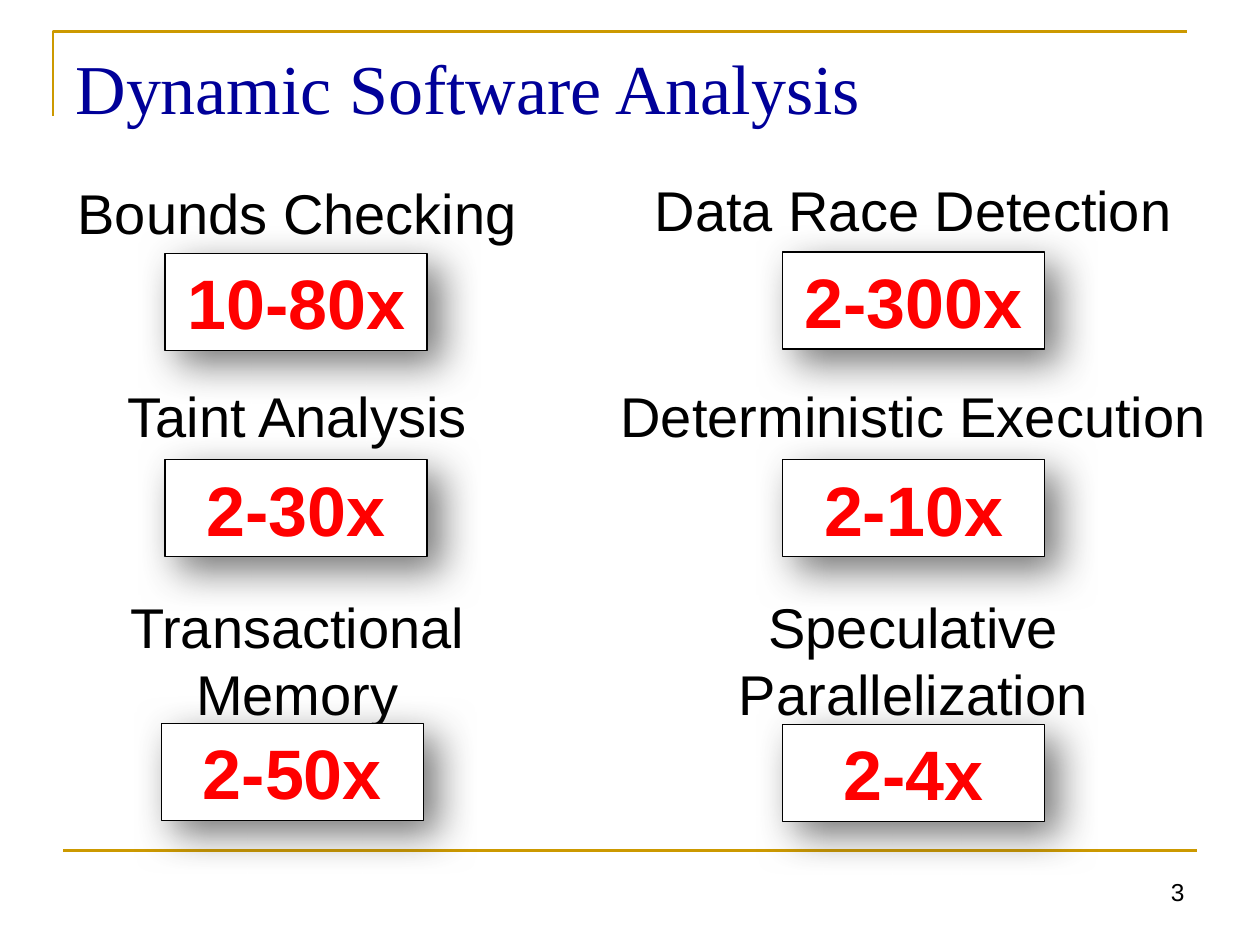
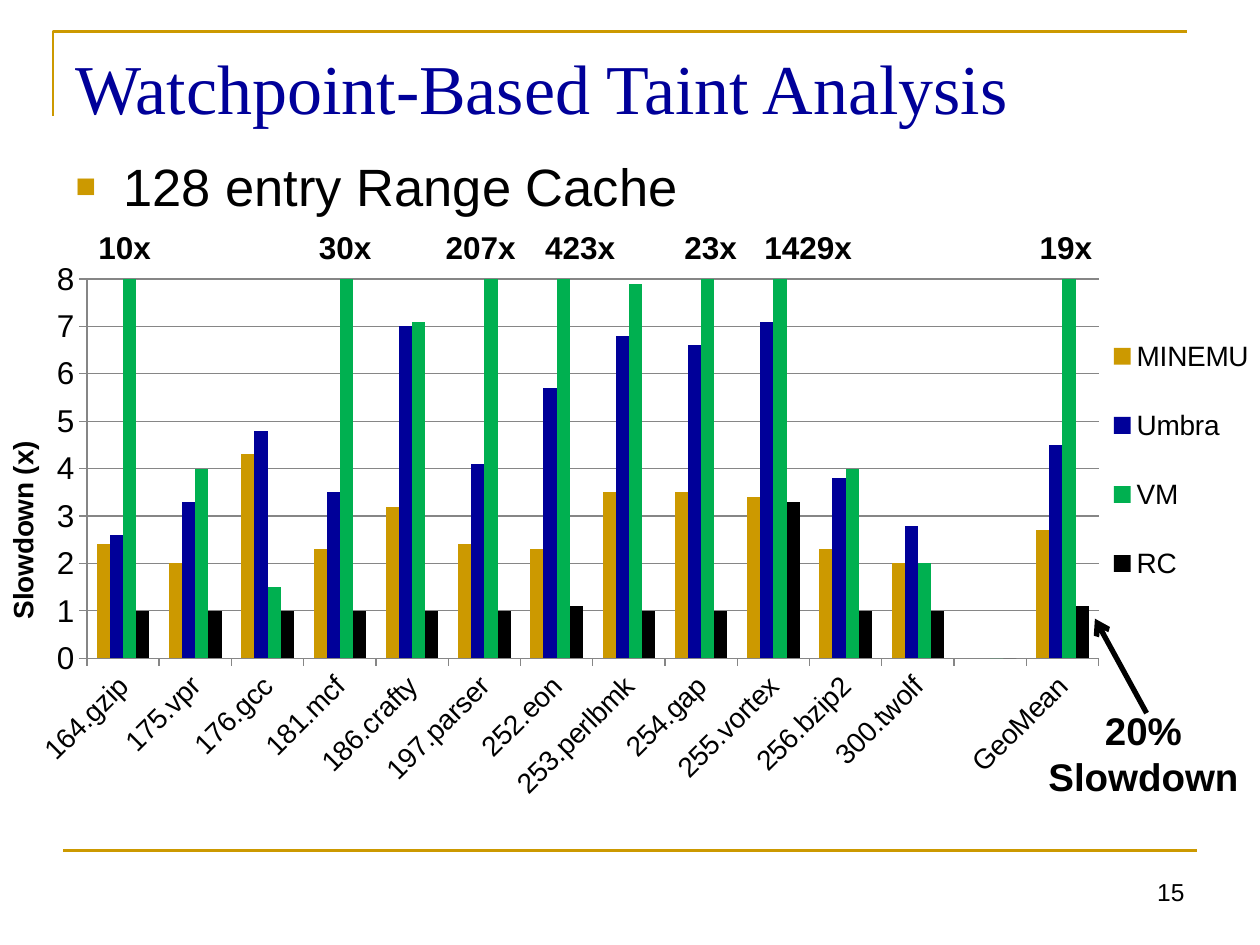
from pptx import Presentation
from pptx.chart.data import CategoryChartData
from pptx.dml.color import RGBColor
from pptx.enum.chart import XL_CHART_TYPE as ChartType, XL_LEGEND_POSITION as LegendAt
from pptx.enum.chart import XL_TICK_MARK as Tick
from pptx.enum.shapes import MSO_CONNECTOR as Connector, MSO_SHAPE as Shape
from pptx.enum.text import MSO_ANCHOR as Anchor, MSO_AUTO_SIZE as AutoSize, PP_ALIGN as Align
from pptx.oxml import parse_xml
from pptx.oxml.ns import nsdecls, qn
from pptx.util import Inches, Pt

GOLD = RGBColor(0xCC, 0x99, 0x00)
NAVY = RGBColor(0x00, 0x00, 0x99)
GREEN = RGBColor(0x00, 0xB0, 0x50)
RED = RGBColor(0xFF, 0x00, 0x00)
BLACK = RGBColor(0x00, 0x00, 0x00)
WHITE = RGBColor(0xFF, 0xFF, 0xFF)
GREY = RGBColor(0x86, 0x86, 0x86)
BODY_FONT, TITLE_FONT = "Arial", "Times New Roman"

# Analysis, slowdown, column centre, caption width, caption top, box centre, box top
ANALYSES = [
    ("Bounds Checking", "10-80x", 2.36, 3.84, 1.37, 2.35, 2.01),
    ("Data Race Detection", "2-300x", 7.25, 4.67, 1.34, 7.25, 2.0),
    ("Taint Analysis", "2-30x", 2.36, 3.84, 2.98, 2.35, 3.65),
    ("Deterministic Execution", "2-10x", 7.25, 5.73, 2.98, 7.25, 3.65),
    ("Transactional Memory", "2-50x", 2.36, 3.84, 4.65, 2.32, 5.74),
    ("Speculative Parallelization", "2-4x", 7.25, 3.84, 4.65, 7.25, 5.75),
]
BENCHMARKS = ["164.gzip", "175.vpr", "176.gcc", "181.mcf", "186.crafty", "197.parser",
              "252.eon", "253.perlbmk", "254.gap", "255.vortex", "256.bzip2",
              "300.twolf", "", "GeoMean"]
SLOWDOWNS = [
    ("MINEMU", GOLD, [2.4, 2, 4.3, 2.3, 3.2, 2.4, 2.3, 3.5, 3.5, 3.4, 2.3, 2, None, 2.7]),
    ("Umbra", NAVY, [2.6, 3.3, 4.8, 3.5, 7, 4.1, 5.7, 6.8, 6.6, 7.1, 3.8, 2.8, None, 4.5]),
    ("VM", GREEN, [10.1, 4, 1.5, 29.8, 7.1, 206.1, 423.2, 7.9, 23.3, 1429.4, 4, 2, 0, 19]),
    ("RC", BLACK, [1, 1, 1, 1, 1, 1, 1.1, 1, 1, 3.3, 1, 1, 0, 1.1]),
]
# Label, left, width of the bars that run past the top of the axis
CLIPPED_BARS = [("10x", 0.68, 0.62), ("30x", 2.43, 0.62), ("207x", 3.42, 0.79),
                ("423x", 4.21, 0.79), ("23x", 5.33, 0.62), ("1429x", 5.9, 1.03),
                ("19x", 8.15, 0.62)]


def set_layout(element, position, x, y, w, h, target=""):
    """Place a plot area or a legend by fractions of the chart."""
    for old in element.findall(qn("c:layout")):
        element.remove(old)
    element.insert(position, parse_xml(
        f'<c:layout {nsdecls("c")}><c:manualLayout>{target}'
        '<c:xMode val="edge"/><c:yMode val="edge"/>'
        f'<c:x val="{x}"/><c:y val="{y}"/><c:w val="{w}"/><c:h val="{h}"/>'
        '</c:manualLayout></c:layout>'))


class Deck:
    def __init__(self):
        self.prs = Presentation()
        self.prs.slide_width, self.prs.slide_height = Inches(10), Inches(7.5)
        self.slide = None

    def style(self, frame, text, size, color=BLACK, bold=False, align=Align.CENTER,
              font=BODY_FONT, anchor=Anchor.TOP):
        frame.text = text
        frame.word_wrap = True
        frame.auto_size = AutoSize.NONE
        frame.vertical_anchor = anchor
        for paragraph in frame.paragraphs:
            paragraph.alignment = align
            paragraph.space_before = Pt(0)
            for run in paragraph.runs:
                run.font.name, run.font.size = font, Pt(size)
                run.font.bold, run.font.color.rgb = bold, color

    def place(self, shape, left, top, width, height):
        shape.left, shape.top = Inches(left), Inches(top)
        shape.width, shape.height = Inches(width), Inches(height)

    def add_slide(self, title, number):
        self.slide = self.prs.slides.add_slide(self.prs.slide_layouts[1])
        # Gold corner and footer rule
        corner = self.slide.shapes.build_freeform(Inches(0.42), Inches(0.92))
        corner.add_line_segments([(Inches(0.42), Inches(0.25)),
                                  (Inches(9.42), Inches(0.25))], close=False)
        outline = corner.convert_to_shape()
        outline.shadow.inherit = False
        outline.fill.background()
        outline.line.color.rgb, outline.line.width = GOLD, Pt(1.5)
        self.line((0.5, 6.75), (9.5, 6.75), GOLD, 1.5)
        # Title and page number
        heading = self.slide.shapes.title
        self.place(heading, 0.5, 0.3, 9, 0.7)
        self.style(heading.text_frame, title, 40, NAVY, align=Align.LEFT, font=TITLE_FONT)
        self.text(number, 7.17, 6.91, 2.33, 0.51, 14, align=Align.RIGHT)

    def line(self, start, end, color, width, arrow=False):
        rule = self.slide.shapes.add_connector(
            Connector.STRAIGHT, *(Inches(v) for v in (*start, *end)))
        rule.line.color.rgb, rule.line.width = color, Pt(width)
        if arrow:
            rule.line._get_or_add_ln().append(
                parse_xml(f'<a:tailEnd {nsdecls("a")} type="arrow"/>'))
        rule._element.spPr.append(parse_xml(f'<a:effectLst {nsdecls("a")}/>'))

    def text(self, text, left, top, width, height, size, **look):
        box = self.slide.shapes.add_textbox(
            Inches(left), Inches(top), Inches(width), Inches(height))
        self.style(box.text_frame, text, size, **look)

    def body(self, text, left, top, width, height, size, bullet=False):
        holder = self.slide.placeholders[1]
        self.place(holder, left, top, width, height)
        frame = holder.text_frame
        self.style(frame, text, size, align=Align.LEFT if bullet else Align.CENTER)
        props = frame.paragraphs[0]._p.get_or_add_pPr()
        indent = Inches(0.38) if bullet else 0
        props.set("marL", str(indent))
        props.set("indent", str(-indent))
        marks = [f'buClr {nsdecls("a")}><a:srgbClr val="{GOLD}"/></a:buClr',
                 f'buSzPct {nsdecls("a")} val="65000"/',
                 f'buFont {nsdecls("a")} typeface="{BODY_FONT}"/',
                 f'buChar {nsdecls("a")} char="■"/']
        for mark in marks if bullet else [f'buNone {nsdecls("a")}/']:
            props.append(parse_xml(f"<a:{mark}>"))

    def factor_box(self, factor, centre, top):
        box = self.slide.shapes.add_shape(
            Shape.RECTANGLE, Inches(centre - 1.04), Inches(top), Inches(2.08), Inches(0.77))
        box.shadow.inherit = False
        box.fill.solid()
        box.fill.fore_color.rgb = WHITE
        box.line.color.rgb, box.line.width = BLACK, Pt(0.75)
        box._element.spPr.find(qn("a:effectLst")).append(parse_xml(
            f'<a:outerShdw {nsdecls("a")} blurRad="{Pt(23)}" dist="{Pt(11)}" dir="2700000" '
            'algn="tl" rotWithShape="0"><a:srgbClr val="333333"><a:alpha val="65000"/>'
            '</a:srgbClr></a:outerShdw>'))
        self.style(box.text_frame, factor, 40, RED, bold=True)

    def column_chart(self, categories, series, value_title, left, top, width, height):
        data = CategoryChartData()
        data.categories = categories
        for name, _, values in series:
            data.add_series(name, values)
        chart = self.slide.shapes.add_chart(
            ChartType.COLUMN_CLUSTERED, Inches(left), Inches(top),
            Inches(width), Inches(height), data).chart
        chart.has_title = False
        chart.font.name, chart.font.size = BODY_FONT, Pt(18)
        chart.font.color.rgb = BLACK
        # Bars
        plot = chart.plots[0]
        plot.gap_width, plot.vary_by_categories = 150, False
        for bars, (_, color, _) in zip(plot.series, series):
            bars.format.fill.solid()
            bars.format.fill.fore_color.rgb = color
            bars.invert_if_negative = False
        # Axes
        names, scale = chart.category_axis, chart.value_axis
        for axis in (names, scale):
            axis.major_tick_mark, axis.minor_tick_mark = Tick.OUTSIDE, Tick.NONE
            axis.format.line.color.rgb = GREY
        names.tick_labels.font.size = Pt(16)
        names._element.find(qn("c:txPr")).find(qn("a:bodyPr")).set("rot", "-2700000")
        scale.minimum_scale, scale.maximum_scale, scale.major_unit = 0, 8, 1
        scale.has_major_gridlines = True
        scale.major_gridlines.format.line.color.rgb = GREY
        title_frame = scale.axis_title.text_frame
        title_frame.text = value_title
        title_font = title_frame.paragraphs[0].runs[0].font
        title_font.name, title_font.size, title_font.bold = BODY_FONT, Pt(16), True
        title_font.color.rgb = BLACK
        # Legend and plot position
        chart.has_legend = True
        chart.legend.position = LegendAt.RIGHT
        chart.legend.include_in_layout = False
        chart.legend.font.size = Pt(16)
        set_layout(chart.legend._element, 1, 0.875, 0.1, 0.125, 0.5)
        set_layout(plot._element.getparent(), 0, 0.069, 0.063, 0.803, 0.602,
                   '<c:layoutTarget val="inner"/>')


def main():
    deck = Deck()

    # Cost of each dynamic analysis
    deck.add_slide("Dynamic Software Analysis", "3")
    for index, (analysis, _, centre, width, top, _, _) in enumerate(ANALYSES):
        caption = deck.text if index else deck.body
        caption(analysis, centre - width / 2, top, width, 0.76, 32)
    for _, factor, _, _, _, centre, top in ANALYSES:
        deck.factor_box(factor, centre, top)

    # Taint analysis results
    deck.add_slide("Watchpoint-Based Taint Analysis", "15")
    deck.body("128 entry Range Cache", 0.5, 1.17, 9, 5.54, 30, bullet=True)
    deck.column_chart(BENCHMARKS, SLOWDOWNS, "Slowdown (x)", 0, 1.9, 10, 5)
    for factor, left, width in CLIPPED_BARS:
        deck.text(factor, left, 1.59, width, 0.57, 18, bold=True, anchor=Anchor.BOTTOM)
    deck.text("20%\nSlowdown", 8.15, 5.56, 1.85, 1.08, 22, bold=True)
    deck.line((9.1, 5.66), (8.69, 4.91), BLACK, 3, arrow=True)

    deck.prs.save("out.pptx")


if __name__ == "__main__":
    main()
